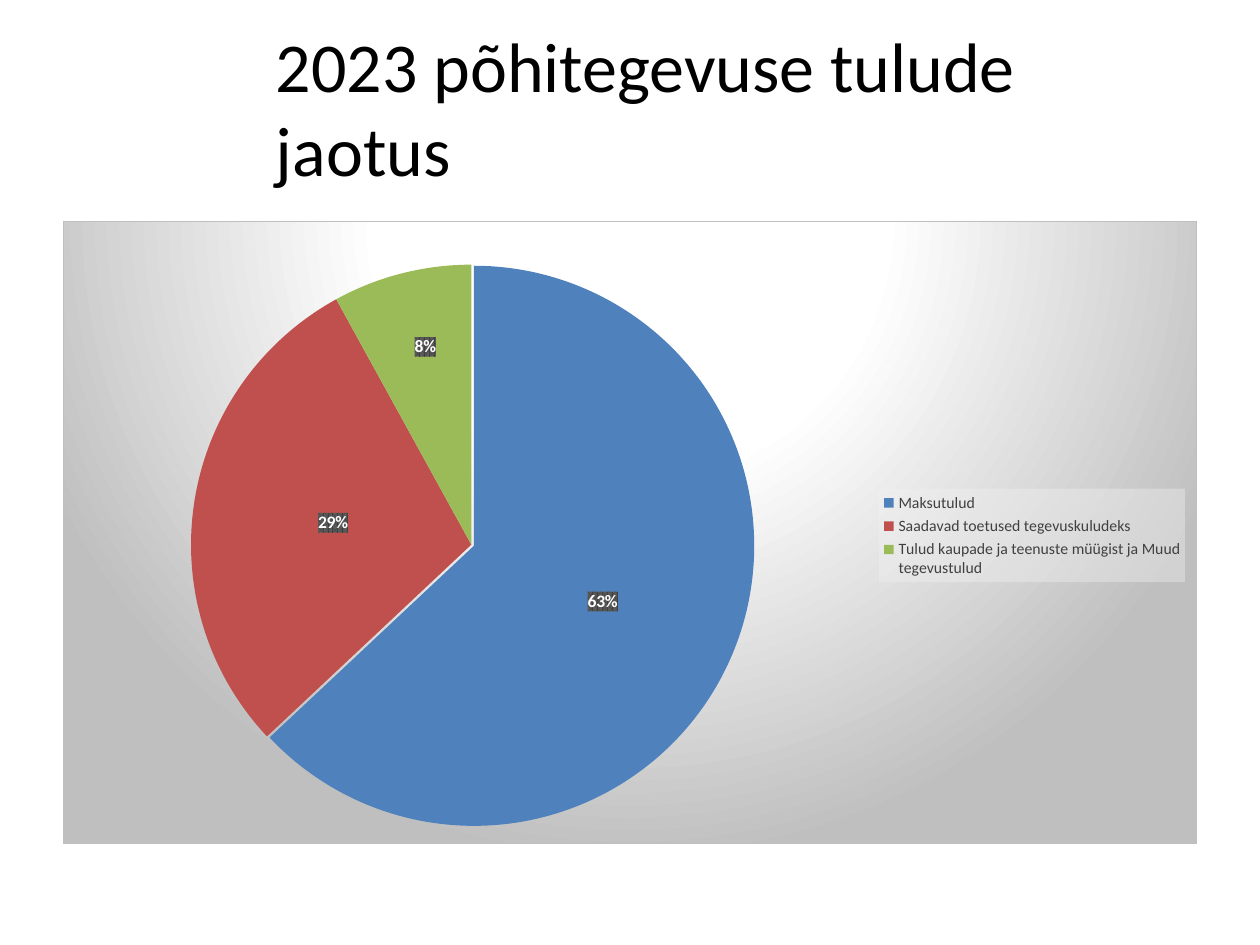
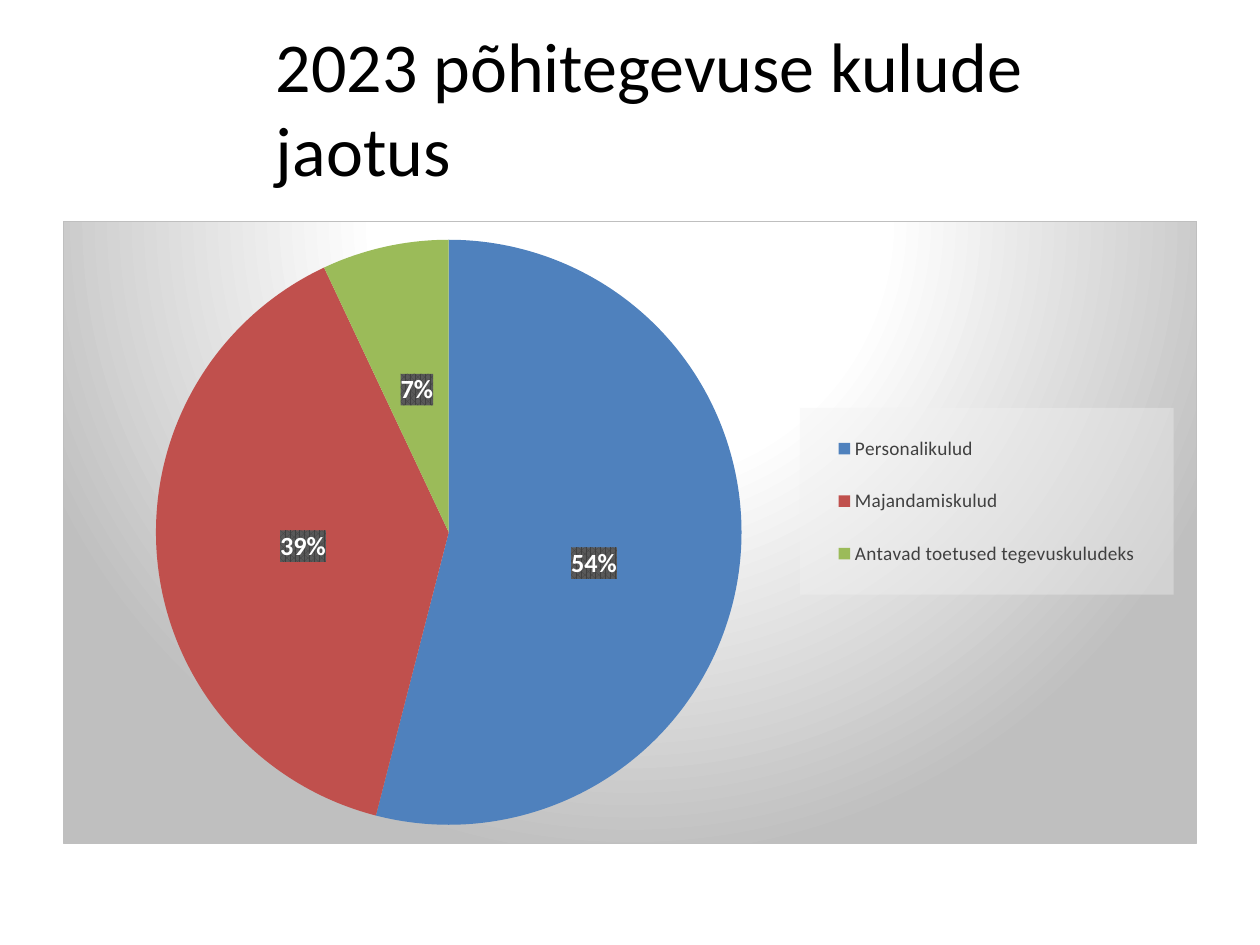
from copy import deepcopy
from lxml.etree import QName
from pptx import Presentation
from pptx.chart.data import CategoryChartData as Data
from pptx.dml.color import RGBColor as Rgb
from pptx.enum.chart import XL_CHART_TYPE as Kind, XL_LABEL_POSITION as Spot
from pptx.enum.chart import XL_LEGEND_POSITION as Side
from pptx.enum.text import MSO_ANCHOR as Anchor, MSO_AUTO_SIZE as Fit, PP_ALIGN as Align
from pptx.oxml import parse_xml
from pptx.oxml.ns import nsdecls, qn
from pptx.util import Pt

FONT = "Calibri"
HUES = {
    "ink": "000000", "white": "FFFFFF", "grey": "BFBFBF", "text": "404040",
    "haze": "F2F2F2", "tag": "404040", "dots": "595959",
}
SLICES = ["4F81BD", "C0504D", "9BBB59"]
TITLE = (150.5, 21.6, 533.5, 78.5)
CHART = (36, 126, 648, 356.4)

PIES = [
    {
        "title": "2023 põhitegevuse tulude jaotus",
        "parts": [
            ("Maksutulud", 63),
            ("Saadavad toetused tegevuskuludeks", 29),
            ("Tulud kaupade ja teenuste müügist ja Muud tegevustulud", 8),
        ],
        "plot": (0.11, 0.07, 0.5, 0.9),
        "key": (0.72, 0.43, 0.27, 0.15),
        "key_size": 9, "tag_size": 10,
        "burst": 1, "shift": (2, -0.01, -0.1),
    },
    {
        "title": "2023 põhitegevuse kulude jaotus",
        "parts": [
            ("Personalikulud", 54),
            ("Majandamiskulud", 39),
            ("Antavad toetused tegevuskuludeks", 7),
        ],
        "plot": (0.08, 0.03, 0.52, 0.94),
        "key": (0.65, 0.3, 0.33, 0.3),
        "key_size": 11, "tag_size": 15,
        "burst": 0, "shift": (0, 0, 0.02),
    },
]


def style(font, size, hue, bold=False):
    font.name, font.size, font.bold = FONT, Pt(size), bold
    font.color.rgb = Rgb.from_string(HUES[hue])


def props(body):
    return parse_xml(f'<c:spPr {nsdecls("c", "a")}>{body}</c:spPr>')


def tint(hue, extra=""):
    return f'<a:srgbClr val="{HUES[hue]}">{extra}</a:srgbClr>'


def layout(x, y, size=None, inner=False):
    rows = [("layoutTarget", "inner")] if inner else []
    if size:
        rows += [("xMode", "edge"), ("yMode", "edge")]
    rows += [("x", x), ("y", y)]
    if size:
        rows += zip("wh", size)
    body = "".join(f'<c:{tag} val="{val}"/>' for tag, val in rows)
    return parse_xml(f'<c:layout {nsdecls("c")}><c:manualLayout>{body}'
                     '</c:manualLayout></c:layout>')


def add_title(slide, words):
    box = slide.shapes.title
    box.left, box.top, box.width, box.height = map(Pt, TITLE)
    frame = box.text_frame
    frame.word_wrap, frame.auto_size = True, Fit.NONE
    frame.vertical_anchor = Anchor.MIDDLE
    para = frame.paragraphs[0]
    para.alignment = Align.LEFT
    run = para.add_run()
    run.text = words
    style(run.font, 40, "ink")


def paint_back(chart):
    stops = "".join(f'<a:gs pos="{at}000">{tint(hue)}</a:gs>'
                    for at, hue in [(0, "white"), (39, "white"), (100, "grey")])
    back = props(
        f'<a:gradFill><a:gsLst>{stops}</a:gsLst><a:path path="circle">'
        '<a:fillToRect l="50000" t="-80000" r="50000" b="180000"/></a:path></a:gradFill>'
        f'<a:ln w="{Pt(0.75)}"><a:solidFill>{tint("grey")}</a:solidFill></a:ln>')
    chart._chartSpace.find(qn("c:chart")).addnext(back)


def set_plot(chart, x, y, *size):
    area = chart._chartSpace.find(".//" + qn("c:plotArea"))
    for old in area.findall(qn("c:layout")):
        area.remove(old)
    area.insert(0, layout(x, y, size, True))


def add_key(chart, size, x, y, *span):
    chart.has_legend = True
    key = chart.legend
    key.position, key.include_in_layout = Side.RIGHT, False
    style(key.font, size, "text")
    root = key._element
    for old in root.findall(qn("c:layout")):
        root.remove(old)
    root.find(qn("c:legendPos")).addnext(layout(x, y, span))
    haze = tint("haze", '<a:alpha val="39000"/>')
    root.find(qn("c:overlay")).addnext(props(f"<a:solidFill>{haze}</a:solidFill>"))


def add_tags(series, size, spot, x, y):
    tags = series.data_labels
    tags.show_value, tags.show_percentage = False, True
    tags.number_format, tags.number_format_is_linked = "0%", False
    tags.position = Spot.CENTER
    style(tags.font, size, "white", True)
    root = tags._element
    root.find(qn("c:numFmt")).addnext(props(
        f'<a:pattFill prst="pct75"><a:fgClr>{tint("tag")}</a:fgClr>'
        f'<a:bgClr>{tint("dots")}</a:bgClr></a:pattFill>'))
    moved = parse_xml(f'<c:dLbl {nsdecls("c")}><c:idx val="{spot}"/></c:dLbl>')
    moved.append(layout(x, y))
    for part in root:
        if QName(part).localname != "showLeaderLines":
            moved.append(deepcopy(part))
    root.insert(0, moved)


def add_pie(slide, pie):
    data = Data()
    names, vals = zip(*pie["parts"])
    data.categories = names
    data.add_series("Series 1", vals)
    chart = slide.shapes.add_chart(Kind.PIE, *map(Pt, CHART), data).chart
    chart.has_title = False
    style(chart.font, 10, "ink")
    paint_back(chart)
    set_plot(chart, *pie["plot"])
    add_key(chart, pie["key_size"], *pie["key"])
    plot = chart.plots[0]
    plot.vary_by_categories = True
    series = plot.series[0]
    for idx, hue in enumerate(SLICES):
        fill = series.points[idx].format.fill
        fill.solid()
        fill.fore_color.rgb = Rgb.from_string(hue)
    if pie["burst"]:
        first = series._element.find(qn("c:dPt"))
        first.find(qn("c:spPr")).addprevious(
            parse_xml(f'<c:explosion {nsdecls("c")} val="{pie["burst"]}"/>'))
    add_tags(series, pie["tag_size"], *pie["shift"])


def main():
    deck = Presentation()
    deck.slide_width, deck.slide_height = Pt(720), Pt(540)
    for pie in PIES:
        slide = deck.slides.add_slide(deck.slide_layouts[5])
        add_title(slide, pie["title"])
        add_pie(slide, pie)
    deck.save("out.pptx")


if __name__ == "__main__":
    main()
